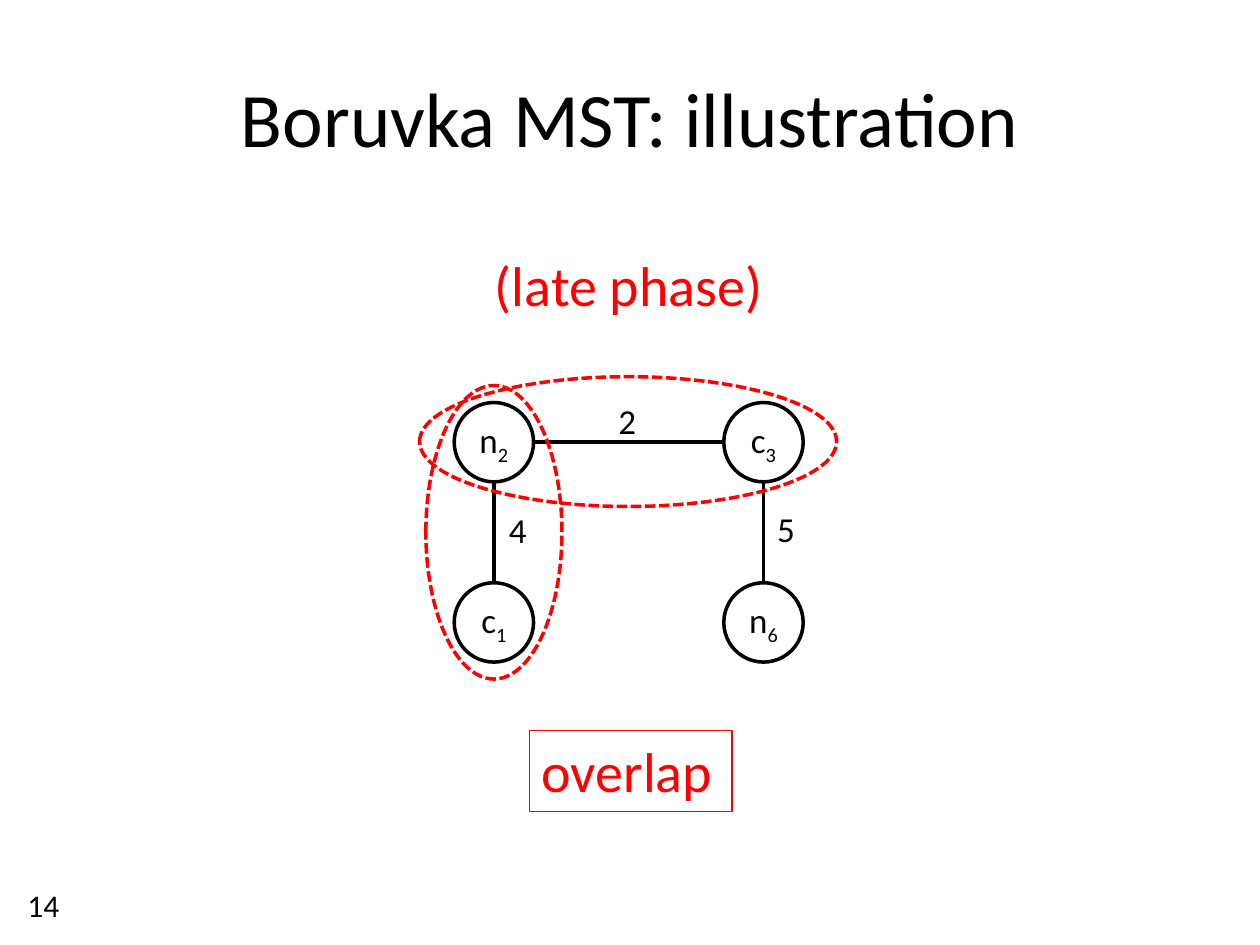
from typing import NamedTuple

from lxml.etree import SubElement
from pptx import Presentation
from pptx.dml.color import RGBColor
from pptx.enum.dml import MSO_LINE
from pptx.enum.shapes import MSO_CONNECTOR, MSO_SHAPE
from pptx.enum.text import MSO_ANCHOR, PP_ALIGN
from pptx.oxml.ns import qn
from pptx.util import Inches, Pt

COLORS = {"ink": "000000", "accent": "FF0000", "paper": "FFFFFF"}
FONT = "Calibri"
NODE_SIZE = 0.63
RADIUS = NODE_SIZE / 2


class Node(NamedTuple):
    letter: str
    index: str
    x: float  # centre
    y: float


class Edge(NamedTuple):
    start: tuple[float, float]
    end: tuple[float, float]
    weight: str
    label_at: tuple[float, float]


class Box(NamedTuple):
    left: float
    top: float
    width: float
    height: float

    def inches(self):
        return [Inches(length) for length in self]


def color(name: str) -> RGBColor:
    return RGBColor.from_string(COLORS[name])


def style_font(paragraph, size: float, color_name: str) -> None:
    paragraph.font.name = FONT
    paragraph.font.size = Pt(size)
    paragraph.font.color.rgb = color(color_name)


def add_text(slide, text: str, box: Box, size: float, color_name="ink", wrap=False):
    label = slide.shapes.add_textbox(*box.inches())
    label.text_frame.word_wrap = wrap
    label.text_frame.text = text
    style_font(label.text_frame.paragraphs[0], size, color_name)
    return label


def add_oval(slide, box: Box, line_color: str):
    oval = slide.shapes.add_shape(MSO_SHAPE.OVAL, *box.inches())
    oval.shadow.inherit = False
    oval.line.color.rgb = color(line_color)
    oval.line.width = Pt(2)
    return oval


def add_node(slide, node: Node) -> None:
    box = Box(node.x - RADIUS, node.y - RADIUS, NODE_SIZE, NODE_SIZE)
    circle = add_oval(slide, box, "ink")
    circle.fill.solid()
    circle.fill.fore_color.rgb = color("paper")
    frame = circle.text_frame
    frame.word_wrap = False
    frame.vertical_anchor = MSO_ANCHOR.MIDDLE
    paragraph = frame.paragraphs[0]
    paragraph.alignment = PP_ALIGN.CENTER
    style_font(paragraph, 20, "ink")
    paragraph.add_run().text = node.letter
    subscript = paragraph.add_run()
    subscript.text = node.index
    subscript.font._element.set("baseline", "-25000")


def add_edge(slide, edge: Edge) -> None:
    ends = [Inches(length) for length in edge.start + edge.end]
    line = slide.shapes.add_connector(MSO_CONNECTOR.STRAIGHT, *ends)
    line.line.color.rgb = color("ink")
    line.line.width = Pt(2)
    SubElement(line._element.spPr, qn("a:effectLst"))
    add_text(slide, edge.weight, Box(*edge.label_at, 0.34, 0.44), 20)


def add_fragment(slide, box: Box) -> None:
    outline = add_oval(slide, box, "accent")
    outline.fill.background()
    outline.line.dash_style = MSO_LINE.SQUARE_DOT  # sysDash


LEFT, RIGHT = 3.92, 6.06
TOP, BOTTOM = 3.51, 4.94

NODES = [
    Node("n", "2", LEFT, TOP),
    Node("c", "1", LEFT, BOTTOM),
    Node("n", "6", RIGHT, BOTTOM),
    Node("c", "3", RIGHT, TOP),
]
EDGES = [
    Edge((RIGHT, TOP + RADIUS), (RIGHT, BOTTOM - RADIUS), "5", (6.07, 3.98)),
    Edge((RIGHT - RADIUS, TOP), (LEFT + RADIUS, TOP), "2", (4.81, 3.12)),
    Edge((LEFT, BOTTOM - RADIUS), (LEFT, TOP + RADIUS), "4", (3.94, 3.99)),
]
FRAGMENTS = [Box(3.38, 3.06, 1.08, 2.33), Box(3.33, 2.99, 3.31, 1.03)]


def main() -> None:
    presentation = Presentation()
    presentation.slide_width = Inches(10)
    presentation.slide_height = Inches(7.5)
    slide = presentation.slides.add_slide(presentation.slide_layouts[5])

    # Title
    title = slide.shapes.title
    title.left, title.top, title.width, title.height = Box(0.5, 0.3, 9, 1.25).inches()
    title.text_frame.text = "Boruvka MST: illustration"
    title.text_frame.vertical_anchor = MSO_ANCHOR.MIDDLE
    heading = title.text_frame.paragraphs[0]
    heading.alignment = PP_ALIGN.CENTER
    style_font(heading, 44, "ink")

    # Graph
    for node in NODES:
        add_node(slide, node)
    for edge in EDGES:
        add_edge(slide, edge)

    # Overlapping fragments
    for fragment in FRAGMENTS:
        add_fragment(slide, fragment)

    # Captions
    overlap = add_text(slide, "overlap", Box(4.2, 5.8, 1.61, 0.64), 32, "accent")
    overlap.line.color.rgb = color("accent")
    overlap.line.width = Pt(0.75)
    add_text(slide, "(late phase)", Box(3.83, 1.94, 2.35, 0.64), 32, "accent")

    # Page number
    add_text(slide, "14", Box(0.12, 6.98, 2.33, 0.4), 18, wrap=True)

    presentation.save("out.pptx")


if __name__ == "__main__":
    main()
